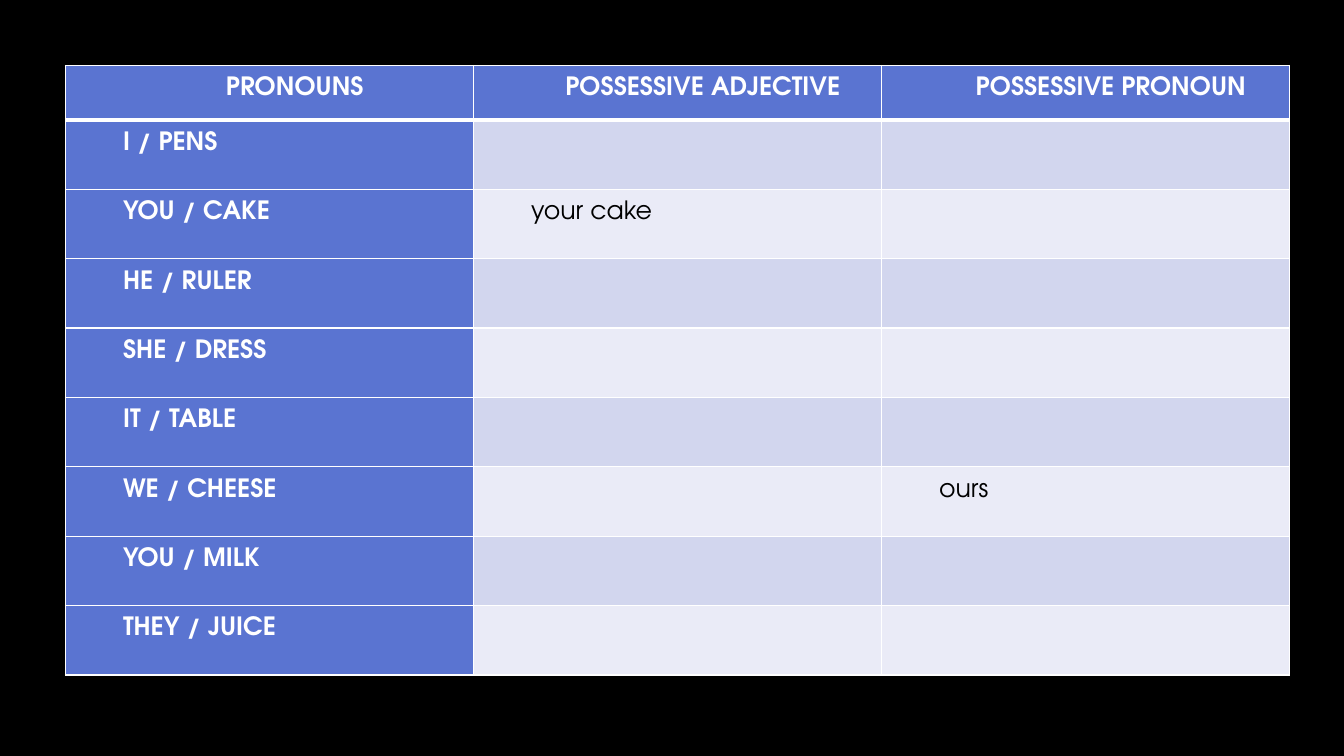
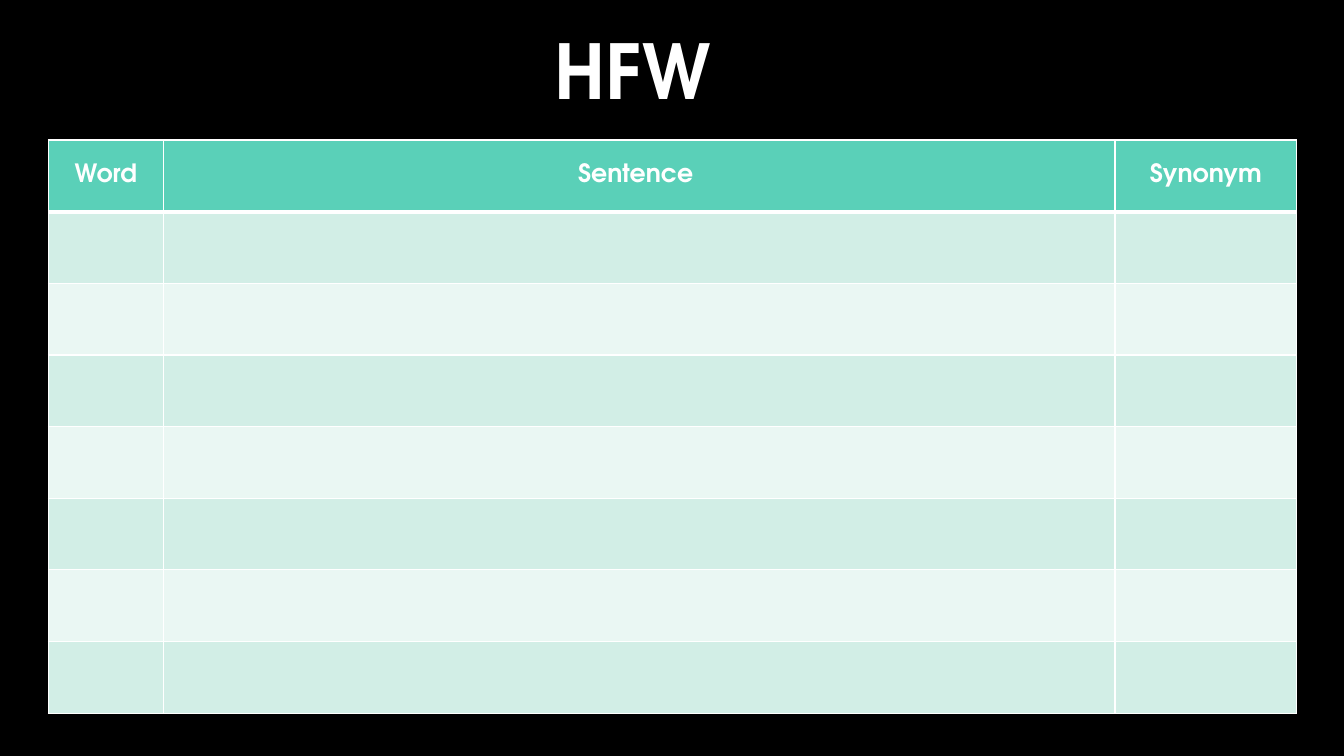
from lxml import etree
from pptx import Presentation, util as u
from pptx.dml.color import RGBColor
from pptx.enum import text
from pptx.oxml.ns import qn

W, H = u.Inches(13.33), u.Inches(7.5)
FONT = "TeX Gyre Adventor"
BLACK, WHITE = "000000", "FFFFFF"
BLUE = ("5A74D1", "D2D6EE", "EAEBF7")
GREEN = ("5AD0B8", "D2EEE6", "EAF7F3")
CENTER, LEFT = text.PP_ALIGN.CENTER, text.PP_ALIGN.LEFT


def x(share):
    return round(W * share / 100)


def y(share):
    return round(H * share / 100)


def paint(fill, color):
    fill.solid()
    fill.fore_color.rgb = RGBColor.from_string(color)


def write(tf, words, size=18, color=WHITE, bold=True, align=CENTER, indent=0, spacing=None):
    p = tf.paragraphs[0]
    p.alignment = align
    if spacing:
        p.line_spacing = spacing
    if indent:
        pPr = p._p.get_or_add_pPr()
        pPr.set("marL", str(u.Inches(indent)))
        pPr.set("indent", "0")
    r = p.add_run()
    r.text = words
    r.font.name, r.font.size, r.font.bold = FONT, u.Pt(size), bold
    paint(r.font.fill, color)


def border(cell, **widths):
    tcPr = cell._tc.get_or_add_tcPr()
    for i, side in enumerate("LRTB"):
        ln = etree.Element(qn(f"a:ln{side}"), w=str(u.Pt(widths.get(side, 1))))
        fill = etree.SubElement(ln, qn("a:solidFill"))
        etree.SubElement(fill, qn("a:srgbClr"), val=WHITE)
        tcPr.insert(i, ln)


def add_slide(prs):
    s = prs.slides.add_slide(prs.slide_layouts[6])
    paint(s.background.fill, BLACK)
    return s


def add_title(s, words, left, top, width, height):
    tf = s.shapes.add_textbox(x(left), y(top), x(width), y(height)).text_frame
    tf.word_wrap = False
    write(tf, words, size=54)


def add_grid(s, left, top, cols, rows, theme, cells, first_col=False, anchor=None, tight=False, **fmt):
    head, *bands = theme
    table = s.shapes.add_table(len(rows), len(cols), x(left), y(top), x(sum(cols)), y(sum(rows))).table
    for col, width in zip(table.columns, cols):
        col.width = x(width)
    for row, height in zip(table.rows, rows):
        row.height = y(height)
    for i in range(len(rows)):
        for j in range(len(cols)):
            cell = table.cell(i, j)
            strong = i == 0 or (first_col and j == 0)
            paint(cell.fill, head if strong else bands[(i - 1) % 2])
            border(cell, T=3 if i == 1 else 1, B=3 if i == 0 else 1)
            if (i, j) not in cells:
                continue
            if anchor is not None:
                cell.vertical_anchor = anchor
            if tight:
                cell.margin_left = cell.margin_right = u.Inches(0.07)
                cell.margin_top = cell.margin_bottom = 0
            write(cell.text_frame, cells[i, j], color=WHITE if strong else BLACK, bold=strong,
                  align=CENTER if i == 0 else LEFT, **fmt)


def add_possessives(prs):
    heads = ("PRONOUNS", "POSSESSIVE ADJECTIVE", "POSSESSIVE PRONOUN")
    prompts = ("I / PENS", "YOU / CAKE", "HE / RULER", "SHE / DRESS",
               "IT / TABLE", "WE / CHEESE", "YOU / MILK", "THEY / JUICE")
    cells = {(0, j): head for j, head in enumerate(heads)}
    cells.update({(i, 0): prompt for i, prompt in enumerate(prompts, 1)})
    cells.update({(2, 1): "your cake", (6, 2): "ours"})
    add_grid(add_slide(prs), 4.88, 8.67, [30.36] * 3, [7.2] + [9.18] * len(prompts), BLUE, cells,
             first_col=True, tight=True, indent=0.5, spacing=1.5)


def add_word_list(prs):
    s = add_slide(prs)
    add_title(s, "HFW", 40.44, 2.53, 13.2, 13.47)
    cells = {(0, j): head for j, head in enumerate(("Word", "Sentence ", "Synonym"))}
    add_grid(s, 3.6, 18.53, [8.55, 70.82, 13.5], [9.48] * 8, GREEN, cells,
             anchor=text.MSO_ANCHOR.MIDDLE)


def main():
    prs = Presentation()
    prs.slide_width, prs.slide_height = W, H
    add_possessives(prs)
    add_word_list(prs)
    prs.save("out.pptx")


if __name__ == "__main__":
    main()
